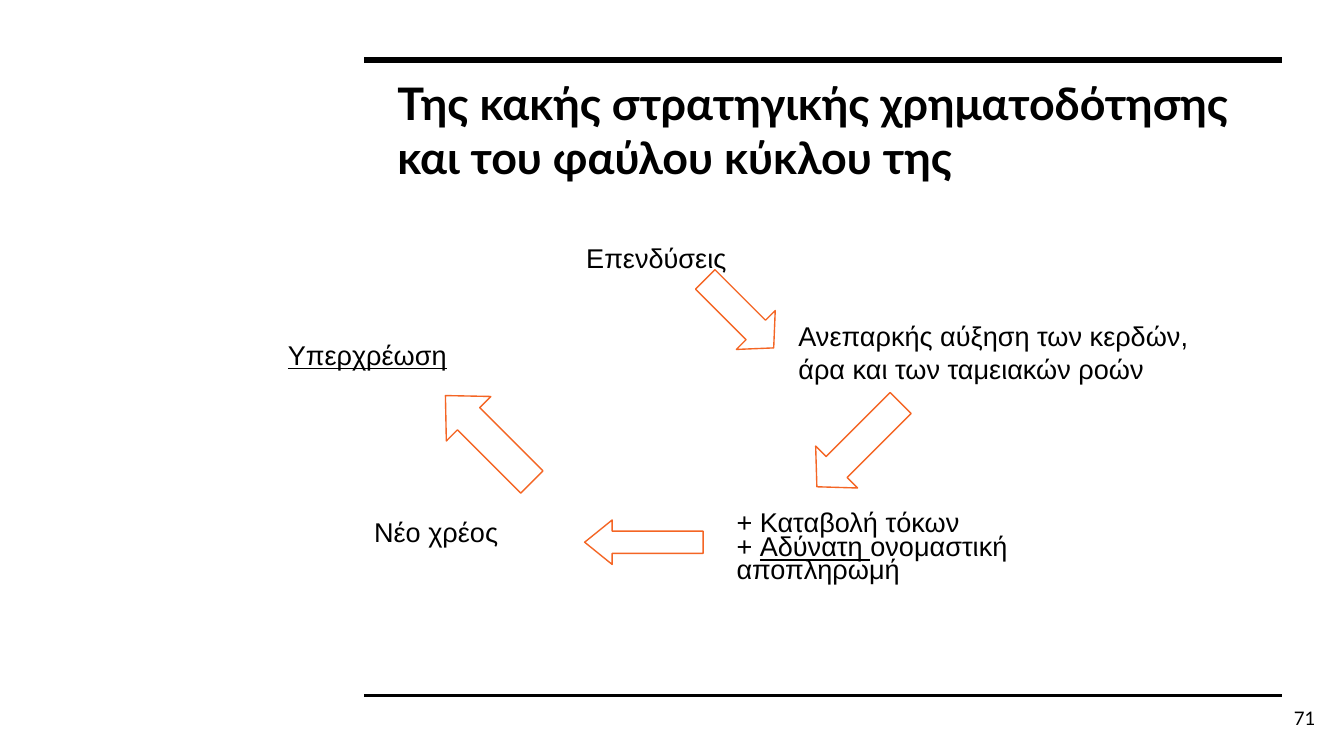
import pptx
import pptx.util
import pptx.dml.color
import pptx.enum.shapes
import pptx.enum.text
import pptx.oxml

Cm, Pt = pptx.util.Cm, pptx.util.Pt
ARROW = pptx.enum.shapes.MSO_SHAPE
ALIGN = pptx.enum.text.PP_ALIGN
ANCHOR = pptx.enum.text.MSO_ANCHOR
GROW = pptx.enum.text.MSO_AUTO_SIZE.SHAPE_TO_FIT_TEXT
BLACK, ORANGE = "000000", "F46524"
STEP_FONT = {"name": "Arial", "size": Pt(14.5)}
TITLE_FONT = {"name": "Lato", "size": Pt(24), "bold": True}
NUMBER_FONT = {"name": "Lato", "size": Pt(10)}
STEP_FRAME = {"margin_left": Cm(0.18), "margin_right": Cm(0.18),
              "margin_top": Cm(0.1), "margin_bottom": Cm(0.1),
              "auto_size": GROW}
WIDE_FRAME = {f"margin_{side}": Cm(0.25)
              for side in ("left", "right", "top", "bottom")}


def color(value):
    """Turn a hex string into a colour."""
    return pptx.dml.color.RGBColor.from_string(value)


def set_attributes(target, values):
    """Set each attribute named in a dict."""
    for name, value in values.items():
        setattr(target, name, value)


def place(box, left, top, width, height):
    """Offset a rectangle in centimetres by the corner of its region."""
    return Cm(box[0] + left), Cm(box[1] + top), Cm(width), Cm(height)


def add_text(slide, area, paragraphs, font, frame_format, paragraph_format):
    """Add a text box from paragraphs of (text, underlined) runs."""
    frame = slide.shapes.add_textbox(*area).text_frame
    set_attributes(frame, {"word_wrap": True, **frame_format})
    for index, runs in enumerate(paragraphs):
        paragraph = frame.add_paragraph() if index else frame.paragraphs[0]
        set_attributes(paragraph, paragraph_format)
        if index:
            paragraph.space_before = Pt(0.7)
        for text, underlined in runs:
            run = paragraph.add_run()
            run.text = text
            set_attributes(run.font, {**font, "underline": underlined})
            run.font.color.rgb = color(BLACK)


def add_rule(slide, box, top, weight):
    """Draw a horizontal rule across the width of a region."""
    left, y, width, _ = place(box, 0, top, box[2], 0)
    rule = slide.shapes.add_connector(
        pptx.enum.shapes.MSO_CONNECTOR.STRAIGHT, left, y, left + width, y)
    set_attributes(rule.line, {"width": Pt(weight)})
    rule.line.color.rgb = color(BLACK)
    rule._element.spPr.append(pptx.oxml.parse_xml(
        '<a:effectLst xmlns:a='
        '"http://schemas.openxmlformats.org/drawingml/2006/main"/>'))


def add_arrow(slide, area, kind, rotation, head):
    """Add an outlined block arrow."""
    arrow = slide.shapes.add_shape(kind, *area)
    arrow.rotation = rotation
    arrow.adjustments[0], arrow.adjustments[1] = 0.5, head
    arrow.shadow.inherit = False
    arrow.fill.background()
    arrow.line.color.rgb = color(ORANGE)
    arrow.line.width = Pt(0.75)


def add_cycle(slide, box):
    """Place the steps of the vicious circle and the arrows between them."""
    steps = [
        ((0, 1.83, 5.33, 0.81), [[("Υπερχρέωση", True)]], {}),
        ((5.64, 0, 5.51, 0.81), [[("Επενδύσεις", False)]], {}),
        ((9.65, 1.47, 8.1, 1.42),
         [[("Ανεπαρκής αύξηση των κερδών, άρα και των ταμειακών ροών", False)]],
         {}),
        ((8.48, 5.16, 6.83, 1.52),
         [[("+ Καταβολή τόκων", False)],
          [("+ ", False), ("Αδύνατη ", True),
           ("ονομαστική αποπληρωμή", False)]],
         {"line_spacing": 0.7}),
        ((1.63, 5.18, 4.06, 0.81), [[("Νέο χρέος", False)]], {}),
    ]
    for area, paragraphs, spacing in steps:
        add_text(slide, place(box, *area), paragraphs, STEP_FONT,
                 STEP_FRAME, spacing)

    arrows = [
        ((7.8, 0.94, 1.83, 1.04), ARROW.RIGHT_ARROW, 45, 0.46),
        ((2.82, 3.23, 2.31, 1.19), ARROW.LEFT_ARROW, 45, 0.52),
        ((10.41, 2.82, 1.12, 2.24), ARROW.DOWN_ARROW, 45, 0.47),
        ((5.79, 5.36, 2.24, 0.84), ARROW.LEFT_ARROW, 0, 0.62),
    ]
    for area, kind, rotation, head in arrows:
        add_arrow(slide, place(box, *area), kind, rotation, head)


def add_page_frame(slide, box):
    """Place the title, the two rules and the page number."""
    title = "Της κακής στρατηγικής χρηματοδότησης και του φαύλου κύκλου της"
    add_text(slide, place(box, 0.38, 0.05, 16.97, 2.41), [[(title, False)]],
             TITLE_FONT, WIDE_FRAME, {})
    add_rule(slide, box, 0, 3)
    add_rule(slide, box, box[3], 1.5)
    add_text(slide, place(box, 16.71, 11.89, 1.52, 1.09), [[("71", False)]],
             NUMBER_FONT, {**WIDE_FRAME, "vertical_anchor": ANCHOR.MIDDLE},
             {"alignment": ALIGN.RIGHT})


def main():
    """Build and save the slide."""
    deck = pptx.Presentation()
    set_attributes(deck, {"slide_width": Cm(25.4), "slide_height": Cm(14.29)})
    slide = deck.slides.add_slide(deck.slide_layouts[6])
    add_cycle(slide, (5.26, 4.47, 17.75, 6.68))
    add_page_frame(slide, (6.88, 1.14, 17.35, 12.01))
    deck.save("out.pptx")


if __name__ == "__main__":
    main()
